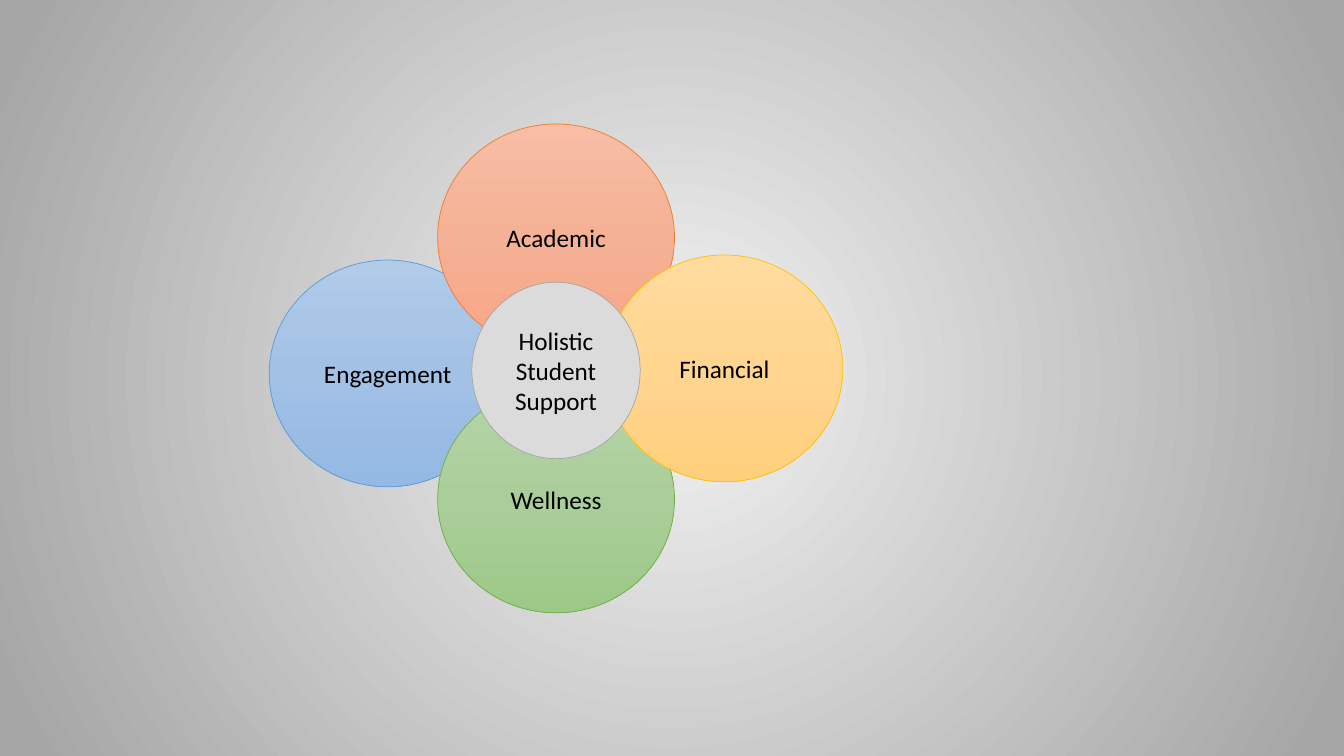
from pptx import Presentation
from pptx import util as u
from pptx.dml.color import RGBColor
from pptx.enum import shapes, text
from pptx.oxml import parse_xml
from pptx.oxml.ns import nsdecls, qn

LINEAR_DOWN = '<a:lin ang="5400000" scaled="0"/>'
FROM_CENTER = ('<a:path path="circle"><a:fillToRect l="50000" t="50000" '
               'r="50000" b="50000"/></a:path>')

PETAL_SIZE = (2.35, 2.25)
# label, left, top, gradient colours, outline
PETALS = [
    ("Engagement", 2.67, 2.58, ("B1CBE9", "A3C1E5", "93B9E4"), "5B9BD5"),
    ("Academic", 4.34, 1.23, ("F7BDA5", "F5B196", "F8A582"), "ED7D31"),
    ("Wellness", 4.34, 3.83, ("B5D5A7", "AACE9A", "9CC987"), "70AD47"),
    ("Financial", 6.01, 2.53, ("FFDB9E", "FFD590", "FFD07C"), "FFC000"),
]


def color(value):
    return RGBColor.from_string(value)


def fill_gradient(shape, stops, direction):
    """Fill a shape with (percent, colour) stops."""
    shape.fill.gradient()
    stop_list = "".join(
        f'<a:gs pos="{percent * 1000}"><a:srgbClr val="{value}"/></a:gs>'
        for percent, value in stops)
    gradient = parse_xml(f'<a:gradFill {nsdecls("a")} rotWithShape="1">'
                         f'<a:gsLst>{stop_list}</a:gsLst>{direction}</a:gradFill>')
    properties = shape._element.spPr
    properties.replace(properties.find(qn("a:gradFill")), gradient)


def add_shape(page, kind, left, top, width, height):
    shape = page.shapes.add_shape(kind, u.Inches(left), u.Inches(top),
                                  u.Inches(width), u.Inches(height))
    shape.shadow.inherit = False
    return shape


def add_backdrop(page):
    backdrop = add_shape(page, shapes.MSO_SHAPE.RECTANGLE, 0, 0, 13.33, 7.5)
    backdrop.line.fill.background()
    fill_gradient(backdrop, [(0, "F2F2F2"), (96, "A6A6A6")], FROM_CENTER)


def add_circle(page, lines, left, top, size, outline):
    circle = add_shape(page, shapes.MSO_SHAPE.OVAL, left, top, *size)
    circle.line.color.rgb = color(outline)
    circle.line.width = u.Pt(0.5)
    frame = circle.text_frame
    frame.word_wrap = True
    frame.vertical_anchor = text.MSO_ANCHOR.MIDDLE
    frame.margin_left = frame.margin_right = 0
    frame.text = "\n".join(lines)
    for para in frame.paragraphs:
        para.alignment = text.PP_ALIGN.CENTER
        para.font.name = "Calibri"
        para.font.size = u.Pt(18)
        para.font.color.rgb = color("000000")
    return circle


def main():
    deck = Presentation()
    deck.slide_width, deck.slide_height = u.Inches(13.33), u.Inches(7.5)
    page = deck.slides.add_slide(deck.slide_layouts[6])

    add_backdrop(page)

    # Four overlapping areas of support
    for label, left, top, shades, outline in PETALS:
        petal = add_circle(page, [label], left, top, PETAL_SIZE, outline)
        fill_gradient(petal, zip((0, 50, 100), shades), LINEAR_DOWN)

    # Shared centre
    center = add_circle(page, ["Holistic", "Student", "Support"],
                        4.68, 2.8, (1.67, 1.75), "A5A5A5")
    center.fill.solid()
    center.fill.fore_color.rgb = color("DBDBDB")

    deck.save("out.pptx")


if __name__ == "__main__":
    main()
